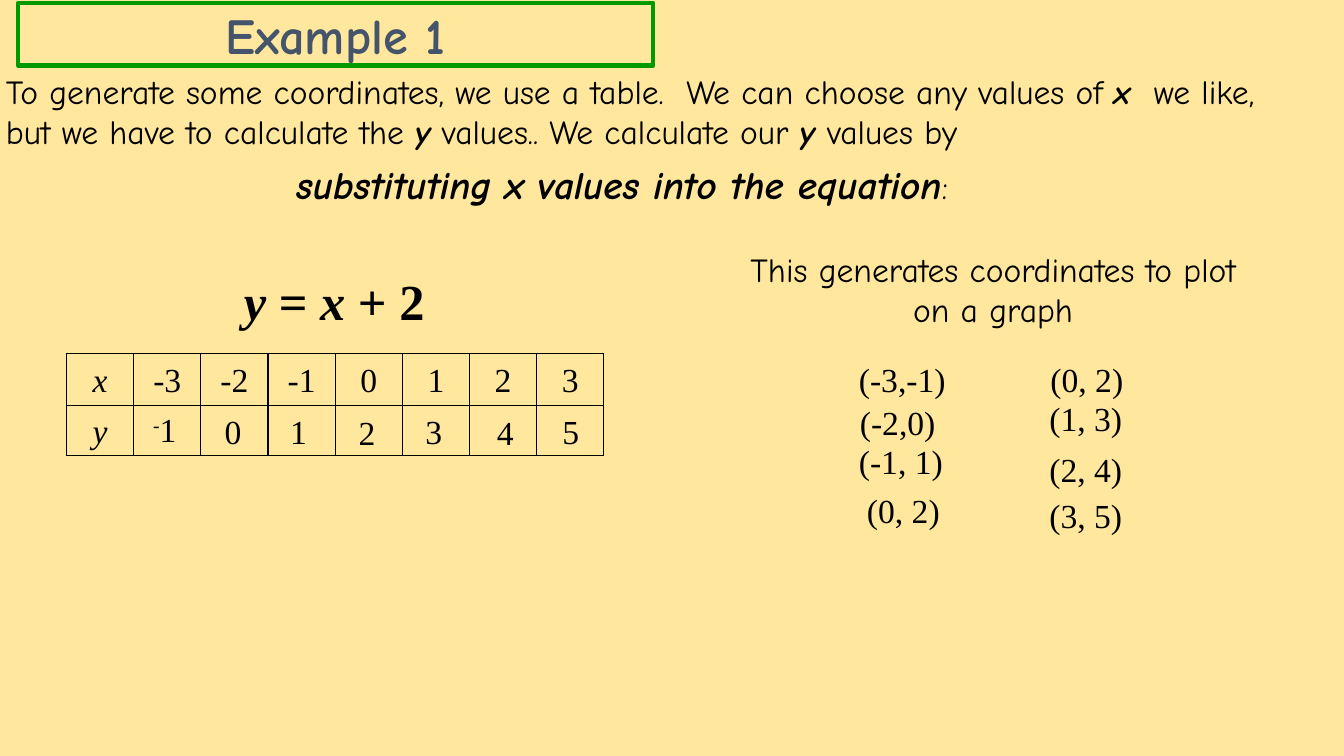
"""Build the slide that makes coordinates from y = x + 2 with a table of values."""
from lxml import etree
from pptx import Presentation
from pptx import util as u
from pptx.dml.color import RGBColor
from pptx.enum import text as t
from pptx.oxml import ns

COLOURS = {"page": "FFE79E", "ink": "000000", "title": "44546A", "frame": "009900"}
SANS, SERIF = "Comic Neue", "Times New Roman"
STRONG = {"bold": True, "italic": True}
ITALIC = {"italic": True}
BOLD = {"bold": True}

TITLE = "Example 1"
X_VALUES = ["x", "-3", "-2", "-1", "0", "1", "2", "3"]
Y_LABEL = "y"

PROSE = [
    ((-0.04, 0.65, 12.97, 1.31), False, [
        ("To generate some coordinates, we use a table.  We can choose any values of ", {}),
        ("x  ", STRONG),
        ("we like, but we have to calculate the ", {}),
        ("y", STRONG),
        (" values.. We calculate our ", {}),
        ("y ", STRONG),
        ("values by", {}),
    ]),
    ((1.11, 1.54, 10.12, 0.57), True, [
        ("substituting x values into the equation", {**STRONG, "size": u.Pt(28)}),
        (":", {}),
    ]),
    ((7.27, 2.42, 5.16, 0.91), True, [
        ("This generates coordinates to plot on a graph", {}),
    ]),
]

EQUATION_AT = (2.32, 2.63, 2.01, 0.71)
EQUATION = [("y", STRONG), (" = ", BOLD), ("x", STRONG), (" + 2", BOLD)]

MINUS_ONE_AT = (1.42, 4.01, 0.44, 0.5)
Y_VALUES = [("0", 2.13, 4.03), ("1", 2.78, 4.03), ("2", 3.46, 4.04),
            ("3", 4.12, 4.03), ("4", 4.83, 4.04), ("5", 5.48, 4.03)]
COORDINATES = [
    ("(-3,-1)", 8.42, 3.51, 1.06), ("(-2,0)", 8.43, 3.94, 0.95),
    ("(-1, 1)", 8.42, 4.33, 1.03), ("(0, 2)", 8.5, 4.81, 0.92),
    ("(0, 2)", 10.32, 3.51, 0.92), ("(1, 3)", 10.31, 3.9, 0.92),
    ("(2, 4)", 10.31, 4.4, 0.92), ("(3, 5)", 10.31, 4.86, 0.92),
]


def colour(name):
    return RGBColor.from_string(COLOURS[name])


def set_all(target, values):
    for name, value in values.items():
        setattr(target, name, value)


def inches(place):
    return [u.Inches(length) for length in place]


def write(para, pieces, font, size=24, ink="ink", centred=False):
    para.alignment = t.PP_ALIGN.CENTER if centred else t.PP_ALIGN.LEFT
    spans = []
    for words, look in pieces:
        span = para.add_run()
        span.text = words
        set_all(span.font, {"name": font, "size": u.Pt(size), **look})
        span.font.color.rgb = colour(ink)
        spans.append(span)
    return spans


def add_text(page, place, pieces, font, size=24, centred=False, wrap=False):
    frame = page.shapes.add_textbox(*inches(place)).text_frame
    set_all(frame, {"word_wrap": wrap, "auto_size": t.MSO_AUTO_SIZE.SHAPE_TO_FIT_TEXT})
    return write(frame.paragraphs[0], pieces, font, size, centred=centred)


def add_borders(cell):
    properties = cell._tc.get_or_add_tcPr()
    for side in ("lnL", "lnR", "lnT", "lnB"):
        line = etree.SubElement(properties, ns.qn("a:" + side), w=str(u.Pt(1)))
        fill = etree.SubElement(line, ns.qn("a:solidFill"))
        etree.SubElement(fill, ns.qn("a:srgbClr"), val=COLOURS["ink"])


def add_value_table(page):
    place = inches((0.66, 3.51, 5.33, 1.01))
    table = page.shapes.add_table(2, len(X_VALUES), *place).table
    set_all(table, {"first_row": False, "horz_banding": False})
    for row, height in zip(table.rows, (0.51, 0.5)):
        row.height = u.Inches(height)
    for cell in table.iter_cells():
        add_borders(cell)
        cell.fill.background()
        cell.vertical_anchor = t.MSO_ANCHOR.BOTTOM
    for column, value in enumerate(X_VALUES):
        look = ITALIC if value == "x" else {}
        write(table.cell(0, column).text_frame.paragraphs[0], [(value, look)], SERIF, centred=True)
    write(table.cell(1, 0).text_frame.paragraphs[0], [(Y_LABEL, ITALIC)], SERIF, centred=True)


def add_title(page):
    title = page.shapes.title
    set_all(title, dict(zip(("left", "top", "width", "height"), inches((0.18, 0.03, 6.3, 0.62)))))
    title.line.color.rgb = colour("frame")
    title.line.width = u.Pt(3)
    set_all(title.text_frame, {"vertical_anchor": t.MSO_ANCHOR.MIDDLE,
                               "auto_size": t.MSO_AUTO_SIZE.NONE})
    write(title.text_frame.paragraphs[0], [(TITLE, BOLD)], SANS, 36, "title", True)


def main():
    deck = Presentation()
    set_all(deck, {"slide_width": u.Inches(13.33), "slide_height": u.Inches(7.5)})
    page = deck.slides.add_slide(deck.slide_layouts.get_by_name("Title Only"))
    page.background.fill.solid()
    page.background.fill.fore_color.rgb = colour("page")

    add_title(page)
    add_value_table(page)
    for place, centred, pieces in PROSE:
        add_text(page, place, pieces, SANS, centred=centred, wrap=True)
    add_text(page, EQUATION_AT, EQUATION, SERIF, 36)

    minus, _ = add_text(page, MINUS_ONE_AT, [("-", {}), ("1", {})], SERIF)
    minus._r.get_or_add_rPr().set("baseline", "30000")
    for value, left, top in Y_VALUES:
        add_text(page, (left, top, 0.37, 0.5), [(value, {})], SERIF)
    for pair, left, top, width in COORDINATES:
        add_text(page, (left, top, width, 0.5), [(pair, {})], SERIF)

    deck.save("out.pptx")


if __name__ == "__main__":
    main()
